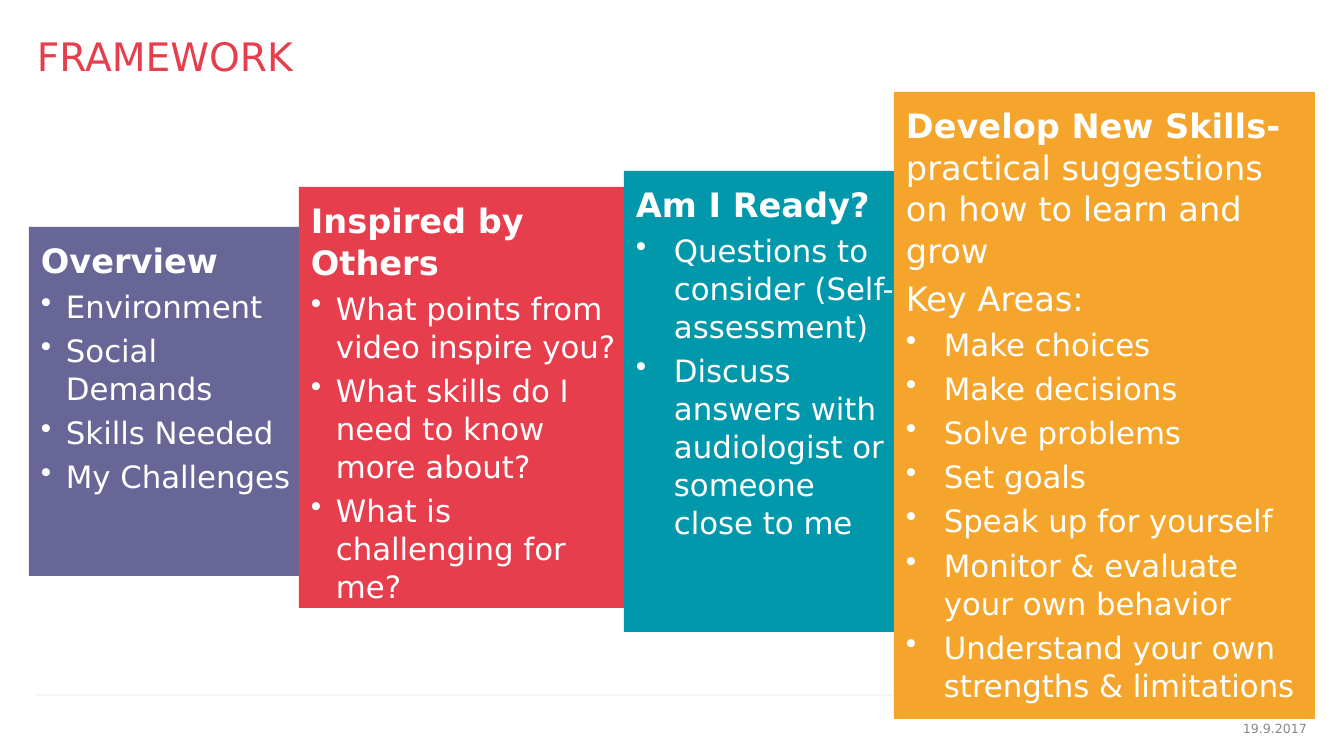
import pptx
import pptx.dml.color
import pptx.enum.shapes
import pptx.enum.text
import pptx.oxml
import pptx.oxml.ns
import pptx.util

EMU_PER_PX = 914400 / 100.8
THEME = {
    "font": "DejaVu Sans",
    "purple": "676696", "red": "E63E4D", "teal": "0098AA", "orange": "F5A52B",
    "white": "FFFFFF", "grey": "898989", "rule": "262626",
    "title": 28, "heading": 24, "bullet": 22, "date": 9,
    "line_spacing": 1.03,
}


def px(length):
    return pptx.util.Emu(round(length * EMU_PER_PX))


def add_span(para, text, size, color, bold=False):
    span = para.add_run()
    span.text = text
    span.font.name = THEME["font"]
    span.font.size = pptx.util.Pt(THEME[size])
    span.font.bold = bold
    span.font.color.rgb = pptx.dml.color.RGBColor.from_string(THEME[color])


PANELS = [
    ("purple", (29, 227, 285, 349), 25, [("Overview", True)], [],
     ["Environment", "Social Demands", "Skills Needed", "My Challenges"]),
    ("red", (299, 187, 334, 421), 25, [("Inspired by Others", True)], [],
     ["What points from video inspire you?",
      "What skills do I need to know more about?",
      "What is challenging for me?"]),
    ("teal", (624, 171, 285, 461), 38, [("Am I Ready?", True)], [],
     ["Questions to consider (Self-assessment)",
      "Discuss answers with audiologist or someone close to me"]),
    ("orange", (894, 92, 421, 627), 38,
     [("Develop New Skills- ", True),
      ("practical suggestions on how to learn and grow", False)],
     [("Key Areas:", False)],
     ["Make choices", "Make decisions", "Solve problems", "Set goals",
      "Speak up for yourself", "Monitor & evaluate your own behavior",
      "Understand your own strengths & limitations"]),
]

deck = pptx.Presentation()
deck.slide_width = px(1344)
deck.slide_height = px(756)
page = deck.slides.add_slide(deck.slide_layouts[5])

title = page.shapes.title
title.left, title.top, title.width, title.height = map(px, (37, 28, 1270, 55))
frame = title.text_frame
frame.margin_left = frame.margin_right = frame.margin_top = frame.margin_bottom = 0
frame.vertical_anchor = pptx.enum.text.MSO_ANCHOR.MIDDLE
para = frame.paragraphs[0]
para.alignment = pptx.enum.text.PP_ALIGN.LEFT
add_span(para, "FRAMEWORK", "title", "red")

rule = page.shapes.add_connector(
    pptx.enum.shapes.MSO_CONNECTOR.STRAIGHT, px(37), px(695), px(1307), px(695))
rule.line.width = pptx.util.Pt(0.25)
rule.line.color.rgb = pptx.dml.color.RGBColor.from_string(THEME["rule"])
rule_color = rule.line.fill._xPr.find(".//" + pptx.oxml.ns.qn("a:srgbClr"))
rule_color.append(pptx.oxml.parse_xml(
    f'<a:alpha {pptx.oxml.ns.nsdecls("a")} val="31000"/>'))
rule._element.spPr.append(pptx.oxml.parse_xml(
    f'<a:effectLst {pptx.oxml.ns.nsdecls("a")}/>'))

date = page.shapes.add_textbox(px(1120), px(721), px(187), px(20))
frame = date.text_frame
frame.word_wrap = True
frame.margin_left = frame.margin_right = frame.margin_top = frame.margin_bottom = 0
para = frame.paragraphs[0]
para.alignment = pptx.enum.text.PP_ALIGN.RIGHT
add_span(para, "19.9.2017", "date", "grey")

for color, bounds, indent, heading, subheading, bullets in PANELS:
    box = page.shapes.add_shape(
        pptx.enum.shapes.MSO_SHAPE.RECTANGLE, *map(px, bounds))
    box.shadow.inherit = False
    box.fill.solid()
    box.fill.fore_color.rgb = pptx.dml.color.RGBColor.from_string(THEME[color])
    box.line.fill.background()
    frame = box.text_frame
    frame.word_wrap = True
    frame.vertical_anchor = pptx.enum.text.MSO_ANCHOR.TOP
    frame.margin_left = frame.margin_right = px(12)
    frame.margin_top = frame.margin_bottom = px(12)

    lines = [("heading", heading)]
    if subheading:
        lines.append(("heading", subheading))
    lines += [("bullet", [(text, False)]) for text in bullets]
    for number, (size, spans) in enumerate(lines):
        para = frame.add_paragraph() if number else frame.paragraphs[0]
        para.alignment = pptx.enum.text.PP_ALIGN.LEFT
        if size == "bullet":
            properties = para._p.get_or_add_pPr()
            properties.set("marL", str(px(indent)))
            properties.set("indent", str(-px(indent)))
            properties.append(pptx.oxml.parse_xml(
                f'<a:buChar {pptx.oxml.ns.nsdecls("a")} char="•"/>'))
        para.line_spacing = THEME["line_spacing"]
        if number:
            para.space_before = pptx.util.Pt(THEME[size] * 0.2)
        for text, bold in spans:
            add_span(para, text, size, "white", bold)

deck.save("out.pptx")
